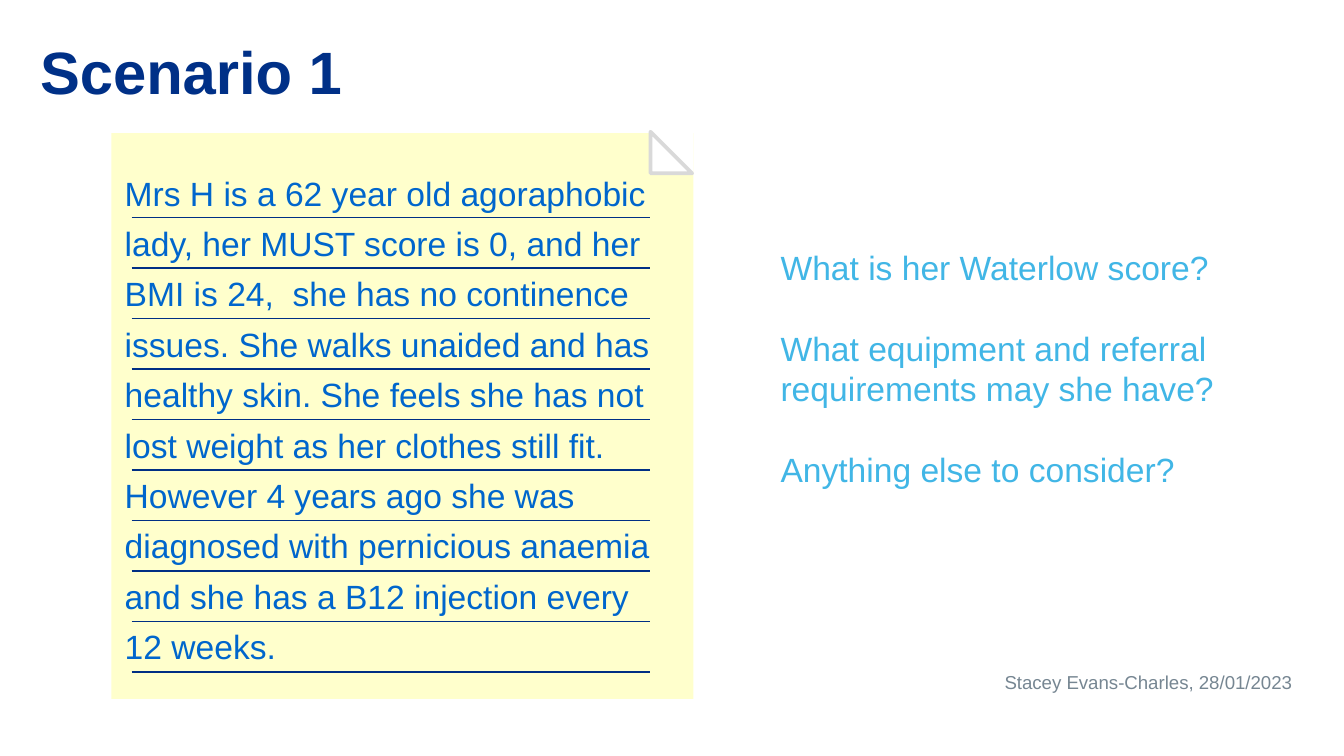
from lxml import etree
from pptx import Presentation
from pptx.dml.color import RGBColor
from pptx.enum.shapes import MSO_CONNECTOR as CONNECTOR, MSO_SHAPE as SHAPE
from pptx.enum.text import MSO_AUTO_SIZE as AUTO_SIZE, PP_ALIGN as ALIGN
from pptx.oxml.ns import qn
from pptx.util import Inches, Pt

COLORS = {
    "title": "003087",
    "footer": "768692",
    "paper": "FFFFCC",
    "white": "FFFFFF",
    "fold": "D9D9D9",
    "rule": "002F84",
    "note": "0066CC",
    "question": "41B6E6",
}
SCENARIO = (
    "Mrs H is a 62 year old agoraphobic lady, her MUST score is 0, and her "
    "BMI is 24,  she has no continence issues. She walks unaided and has "
    "healthy skin. She feels she has not lost weight as her clothes still fit. "
    "However 4 years ago she was diagnosed with pernicious anaemia and she has "
    "a B12 injection every 12 weeks."
)
QUESTIONS = [
    "What is her Waterlow score?",
    "What equipment and referral requirements may she have?",
    "Anything else to consider?",
]
RULE_COUNT = 10
FIRST_RULE, LAST_RULE = 1.62, 5
RULE_GAP = (LAST_RULE - FIRST_RULE) / (RULE_COUNT - 1)


def color(name):
    return RGBColor.from_string(COLORS[name])


class SlideBuilder:
    font_name = "Arial"

    def __init__(self, slide):
        self.slide = slide

    def text(self, paragraphs, left, top, width, height, *, size, ink,
             bold=False, align=ALIGN.LEFT, spacing=None, gap=0):
        """Add a text box; gap is the space in points between paragraphs."""
        box = self.slide.shapes.add_textbox(
            Inches(left), Inches(top), Inches(width), Inches(height))
        frame = box.text_frame
        frame.word_wrap = True
        frame.auto_size = AUTO_SIZE.SHAPE_TO_FIT_TEXT
        for index, content in enumerate(paragraphs):
            paragraph = frame.add_paragraph() if index else frame.paragraphs[0]
            paragraph.alignment = align
            if spacing:
                paragraph.line_spacing = spacing
            if index and gap:
                paragraph.space_before = Pt(gap)
            run = paragraph.add_run()
            run.text = content
            run.font.name = self.font_name
            run.font.size = Pt(size)
            run.font.bold = bold
            run.font.color.rgb = color(ink)

    def shape(self, kind, left, top, width, height, *, fill, outline=None, rotation=0):
        shape = self.slide.shapes.add_shape(
            kind, Inches(left), Inches(top), Inches(width), Inches(height))
        shape.shadow.inherit = False
        shape.rotation = rotation
        shape.fill.solid()
        shape.fill.fore_color.rgb = color(fill)
        if outline:
            shape.line.color.rgb = color(outline)
            shape.line.width = Pt(2)
        else:
            shape.line.fill.background()

    def rule(self, left, right, y):
        line = self.slide.shapes.add_connector(
            CONNECTOR.STRAIGHT, Inches(left), Inches(y), Inches(right), Inches(y))
        line.line.color.rgb = color("rule")
        line.line.width = Pt(0.75)
        etree.SubElement(line._element.spPr, qn("a:effectLst"))


def main():
    presentation = Presentation()
    presentation.slide_width = Inches(10)
    presentation.slide_height = Inches(10 * 9 / 16)
    slide = presentation.slides.add_slide(presentation.slide_layouts[6])
    builder = SlideBuilder(slide)

    builder.text(["Scenario 1"], 0.2, 0.21, 7.9, 0.64, size=32, ink="title", bold=True)
    builder.text(["Stacey Evans-Charles, 28/01/2023"], 7.37, 4.94, 2.34, 0.27,
                 size=10, ink="footer", align=ALIGN.RIGHT)

    builder.shape(SHAPE.RECTANGLE, 0.83, 0.99, 4.33, 4.21, fill="paper")
    builder.shape(SHAPE.RIGHT_TRIANGLE, 4.85, 0.98, 0.31, 0.31, fill="white", rotation=180)
    builder.shape(SHAPE.RIGHT_TRIANGLE, 4.84, 0.98, 0.31, 0.31, fill="white", outline="fold")
    for row in range(RULE_COUNT):
        builder.rule(0.98, 4.84, FIRST_RULE + row * RULE_GAP)
    builder.text([SCENARIO], 0.83, 1.16, 4.17, 3.85, size=18, ink="note", spacing=1.25)

    builder.text(QUESTIONS, 5.71, 1.79, 3.54, 1.92, size=18, ink="question", gap=21.6)

    presentation.save("out.pptx")


if __name__ == "__main__":
    main()
